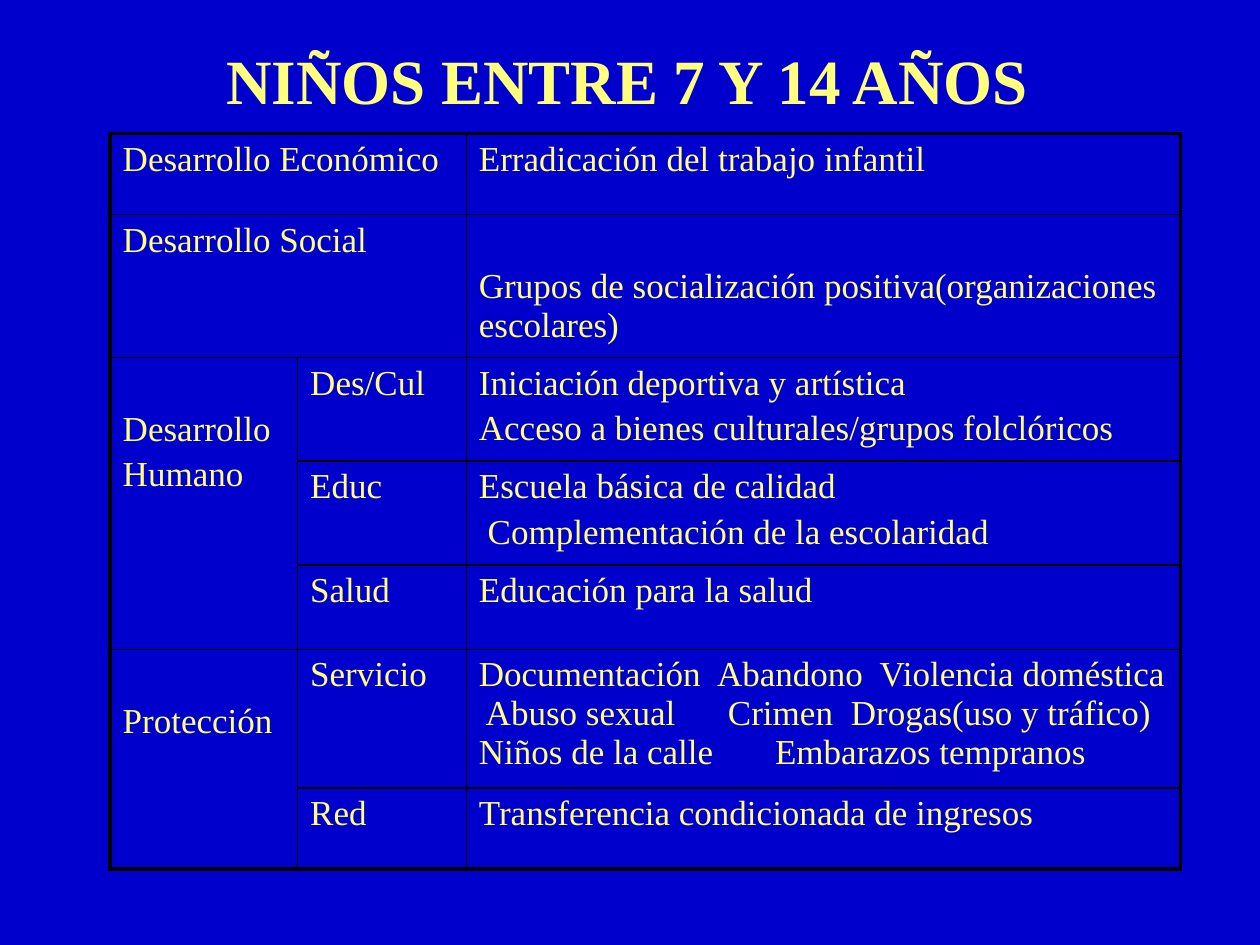
import pptx
import pptx.dml.color
import pptx.enum.text
import pptx.oxml
import pptx.oxml.ns
import pptx.util
from lxml import etree

Cm = pptx.util.Cm
Pt = pptx.util.Pt

# Content: (row, column): paragraphs; a tab moves to the next tab stop
TITLE = "NIÑOS ENTRE 7 Y 14 AÑOS"
CELLS = {
    (0, 0): ["Desarrollo Económico"],
    (0, 2): ["Erradicación del trabajo infantil"],
    (1, 0): ["Desarrollo Social"],
    (1, 2): ["Grupos de socialización positiva(organizaciones escolares)"],
    (2, 0): ["Desarrollo", "Humano"],
    (2, 1): ["Des/Cul"],
    (2, 2): ["Iniciación deportiva y artística",
             "Acceso a bienes culturales/grupos folclóricos"],
    (3, 1): ["Educ"],
    (3, 2): ["Escuela básica de calidad", " Complementación de la escolaridad"],
    (4, 1): ["Salud"],
    (4, 2): ["Educación para la salud"],
    (5, 0): ["Protección"],
    (5, 1): ["Servicio"],
    (5, 2): ["Documentación\tAbandono\tViolencia doméstica",
             " Abuso sexual\tCrimen\tDrogas(uso y tráfico)",
             "Niños de la calle\tEmbarazos tempranos"],
    (6, 1): ["Red"],
    (6, 2): ["Transferencia condicionada de ingresos"],
}
MERGES = [((0, 0), (0, 1)), ((1, 0), (1, 1)), ((2, 0), (4, 0)), ((5, 0), (6, 0))]
LOWERED = {(1, 2), (2, 0), (5, 0)}  # cells whose text starts one line down
TAB_STOPS = {(5, 2): [(4.8, 8.08), (5.02, 7.5), (5.97,)]}  # cm, per paragraph

# Layout and format
COLUMN_WIDTHS = [3.78, 3.4, 14.4]
ROW_HEIGHTS = [1.63, 1.63, 1.75, 1.63, 1.7, 1.5, 1.63]
LINE_STEP = 0.93
MARGIN_TOP = 0.13
BLUE, YELLOW, BLACK = "0000CC", "FFFF7D", "000000"
TITLE_FONT = {"name": "Times New Roman", "size": Pt(36), "bold": True}
CELL_FONT = {"name": "Times New Roman", "size": Pt(20), "bold": False}
OUTER, INNER = Pt(2.25), Pt(1)


def color(value):
    return pptx.dml.color.RGBColor.from_string(value)


def write(paragraph, text, font_format):
    run = paragraph.add_run()
    run.text = text
    for name, value in font_format.items():
        setattr(run.font, name, value)
    run.font.color.rgb = color(YELLOW)


def add_child(parent, tag, **attributes):
    values = {name: str(value) for name, value in attributes.items()}
    return etree.SubElement(parent, pptx.oxml.ns.qn(tag), values)


def set_tab_stops(paragraph, stops):
    tab_list = add_child(paragraph._p.get_or_add_pPr(), "a:tabLst")
    for stop in stops:
        add_child(tab_list, "a:tab", pos=int(Cm(stop)), algn="l")


def set_borders(cell, row, column):
    outer_sides = {
        "a:lnL": column == 0,
        "a:lnR": column + cell.span_width == len(COLUMN_WIDTHS),
        "a:lnT": row == 0,
        "a:lnB": row + cell.span_height == len(ROW_HEIGHTS),
    }
    properties = cell._tc.get_or_add_tcPr()
    for tag, is_outer in outer_sides.items():
        line = add_child(properties, tag, w=int(OUTER if is_outer else INNER))
        add_child(add_child(line, "a:solidFill"), "a:srgbClr", val=BLACK)


def fill_cell(cell, position, texts):
    stops = TAB_STOPS.get(position, [])
    frame = cell.text_frame
    for index, text in enumerate(texts):
        paragraph = frame.add_paragraph() if index else frame.paragraphs[0]
        paragraph.space_before = Pt(0 if stops else 4)
        if stops:
            set_tab_stops(paragraph, stops[index])
        write(paragraph, text, CELL_FONT)
    cell.margin_top = Cm(MARGIN_TOP + LINE_STEP * (position in LOWERED))


# Slide
presentation = pptx.Presentation()
presentation.slide_width, presentation.slide_height = Cm(25.4), Cm(19.05)
slide = presentation.slides.add_slide(presentation.slide_layouts[6])
slide.background.fill.solid()
slide.background.fill.fore_color.rgb = color(BLUE)

# Title
title = slide.shapes.add_textbox(Cm(1.85), Cm(0), Cm(21.59), Cm(3.18))
title.text_frame.word_wrap = True
title.text_frame.vertical_anchor = pptx.enum.text.MSO_ANCHOR.MIDDLE
heading = title.text_frame.paragraphs[0]
heading.alignment = pptx.enum.text.PP_ALIGN.CENTER
write(heading, TITLE, TITLE_FONT)

# Table
table_height = Cm(14.94)
table_shape = slide.shapes.add_table(
    len(ROW_HEIGHTS), len(COLUMN_WIDTHS), Cm(2.22), Cm(2.69),
    Cm(sum(COLUMN_WIDTHS)), table_height)
table = table_shape.table
table.first_row = table.horz_banding = False
for column, width in zip(table.columns, COLUMN_WIDTHS):
    column.width = Cm(width)
for row, height in zip(table.rows, ROW_HEIGHTS):
    row.height = Cm(height)
table_shape.height = table_height
for first, last in MERGES:
    table.cell(*first).merge(table.cell(*last))
for position, texts in CELLS.items():
    cell = table.cell(*position)
    fill_cell(cell, position, texts)
    set_borders(cell, *position)
for cell in table.iter_cells():
    cell.fill.background()

presentation.save("out.pptx")
